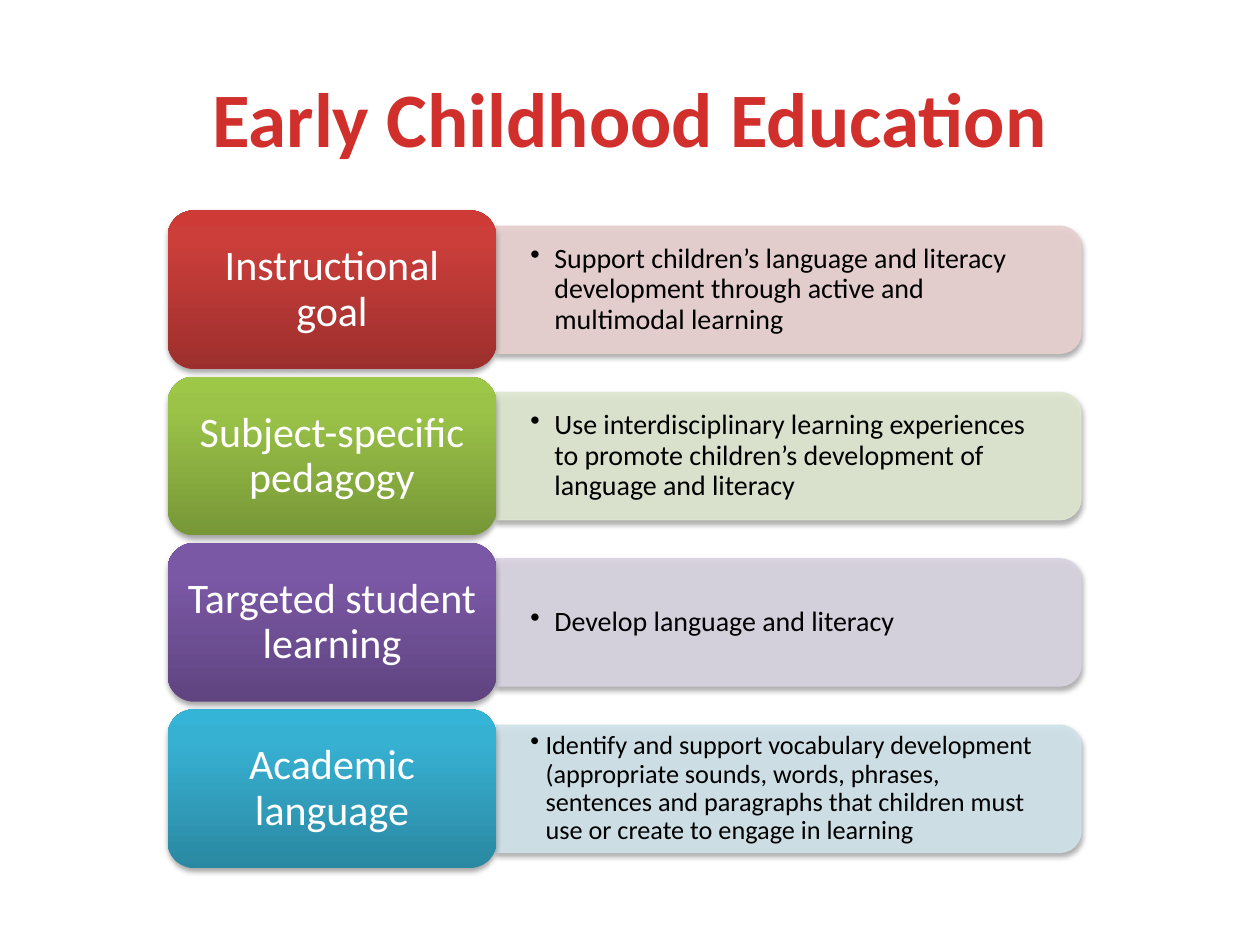
from copy import deepcopy
from dataclasses import dataclass

from lxml.etree import SubElement
from pptx import Presentation
from pptx.dml.color import RGBColor
from pptx.enum.shapes import MSO_SHAPE
from pptx.enum.text import MSO_ANCHOR, PP_ALIGN
from pptx.oxml.ns import qn
from pptx.util import Emu, Inches, Pt

FONT = "Calibri"
LEFT, TOP, PITCH = 1.33, 1.67, 1.32
LABEL_W, LABEL_H = 2.61, 1.26
PANEL_W, PANEL_H = 4.64, 1.01
DETAIL_W, DETAIL_H = 4.59, 0.91


@dataclass
class Topic:
    label: str
    detail: str
    shades: tuple[str, str, str]  # bottom to top
    tint: str
    size: int = 16
    indent: float = 0.19


TOPICS = [
    Topic("Instructional goal",
          "Support children’s language and literacy development through "
          "active and multimodal learning",
          ("9C2F2D", "CB3E3A", "CE3B37"), "E8D0D0"),
    Topic("Subject-specific pedagogy",
          "Use interdisciplinary learning experiences to promote children’s "
          "development of language and literacy",
          ("779737", "9BC348", "9DC746"), "DEE7D1"),
    Topic("Targeted student learning",
          "Develop language and literacy",
          ("5F4480", "7B58A6", "7C57A8"), "D8D3E0"),
    Topic("Academic language",
          "Identify and support vocabulary development (appropriate sounds, "
          "words, phrases, sentences and paragraphs that children must use "
          "or create to engage in learning",
          ("2A88A2", "37B1D2", "34B4D6"), "D0E3EA", 15, 0.12),
]


def rgb(color: str) -> RGBColor:
    return RGBColor.from_string(color)


def write(frame, text: str, size: int, color: str, bold: bool = False):
    frame.text = text
    frame.word_wrap = True
    frame.vertical_anchor = MSO_ANCHOR.MIDDLE
    paragraph = frame.paragraphs[0]
    font = paragraph.runs[0].font
    font.name, font.size, font.bold = FONT, Pt(size), bold
    font.color.rgb = rgb(color)
    return paragraph


def set_alpha(color_parent, percent: int) -> None:
    for color in color_parent.iter(qn("a:srgbClr")):
        SubElement(color, qn("a:alpha"), val=str(percent * 1000))


def add_shadow(shape) -> None:
    shape.shadow.inherit = False
    effects = shape._element.spPr.find(qn("a:effectLst"))
    shadow = SubElement(effects, qn("a:outerShdw"), blurRad=str(Pt(3.15)),
                        dist=str(Pt(1.8)), dir="5400000", rotWithShape="0")
    SubElement(shadow, qn("a:srgbClr"), val="000000")
    set_alpha(shadow, 35)


def fill_gradient(shape, shades: tuple[str, str, str]) -> None:
    shape.fill.gradient()
    shape.fill.gradient_angle = 90
    stop_list = shape._element.spPr.find(".//" + qn("a:gsLst"))
    stop_list.append(deepcopy(stop_list[-1]))
    for stop, shade, position in zip(shape.fill.gradient_stops, shades, (0, 0.8, 1)):
        stop.color.rgb = rgb(shade)
        stop.position = position


def add_panel(slide, middle: float, tint: str) -> None:
    """Draw a panel on end and turn it, so its round corners face right."""
    center = LEFT + LABEL_W + PANEL_W / 2
    panel = slide.shapes.add_shape(
        MSO_SHAPE.ROUND_2_SAME_RECTANGLE,
        Inches(center - PANEL_H / 2), Inches(middle - PANEL_W / 2),
        Inches(PANEL_H), Inches(PANEL_W))
    panel.rotation = 90
    panel.fill.solid()
    panel.fill.fore_color.rgb = rgb(tint)
    panel.line.color.rgb = rgb(tint)
    panel.line.width = Pt(0.75)
    set_alpha(panel._element.spPr, 90)
    add_shadow(panel)


def add_detail(slide, middle: float, topic: Topic) -> None:
    frame = slide.shapes.add_textbox(
        Inches(LEFT + LABEL_W), Inches(middle - DETAIL_H / 2),
        Inches(DETAIL_W), Inches(DETAIL_H)).text_frame
    frame.margin_left = frame.margin_right = Inches(0.27)
    frame.margin_top = frame.margin_bottom = Inches(0.14)
    paragraph = write(frame, topic.detail, topic.size, "000000")
    paragraph.line_spacing = 0.9
    properties = paragraph._p.get_or_add_pPr()
    indent = Emu(Inches(topic.indent))
    properties.set("marL", str(indent))
    properties.set("indent", str(-indent))
    SubElement(properties, qn("a:buChar"), char="•")


def add_label(slide, middle: float, topic: Topic) -> None:
    label = slide.shapes.add_shape(
        MSO_SHAPE.ROUNDED_RECTANGLE, Inches(LEFT), Inches(middle - LABEL_H / 2),
        Inches(LABEL_W), Inches(LABEL_H))
    fill_gradient(label, topic.shades)
    label.line.fill.background()
    add_shadow(label)
    paragraph = write(label.text_frame, topic.label, 24, "FFFFFF")
    paragraph.alignment = PP_ALIGN.CENTER
    paragraph.line_spacing = 0.9


def main() -> None:
    deck = Presentation()
    deck.slide_width, deck.slide_height = Inches(10), Inches(7.5)
    slide = deck.slides.add_slide(deck.slide_layouts[5])

    title = slide.shapes.title
    title.left, title.top = Inches(0.5), Inches(0.3)
    title.width, title.height = Inches(9), Inches(1.25)
    heading = write(title.text_frame, "Early Childhood Education", 44, "D02F2C", True)
    heading.alignment = PP_ALIGN.CENTER

    for row, topic in enumerate(TOPICS):
        middle = TOP + LABEL_H / 2 + row * PITCH
        add_panel(slide, middle, topic.tint)
        add_detail(slide, middle, topic)
        add_label(slide, middle, topic)

    deck.save("out.pptx")


if __name__ == "__main__":
    main()
